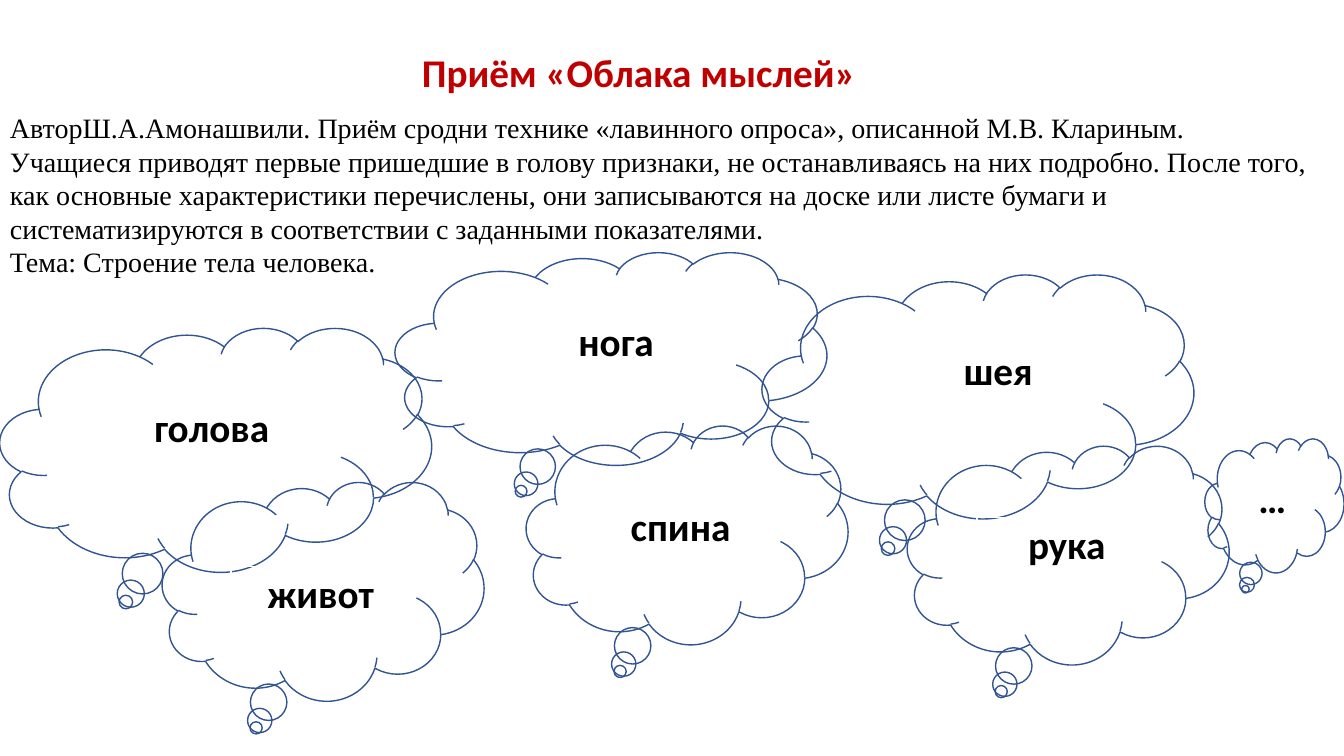
import pptx
import pptx.util
import pptx.dml.color
import pptx.enum.shapes
import pptx.enum.text
import pptx.oxml
import pptx.oxml.ns

HEAD = ("Приём «Облака мыслей»", (3.39, 0.45, 5.89, 0.57), 0.41)
LINES = [
    "АвторШ.А.Амонашвили. Приём сродни технике «лавинного опроса», описанной М.В. Клариным.",
    "Учащиеся приводят первые пришедшие в голову признаки, не останавливаясь на них подробно. После того,",
    "как основные характеристики перечислены, они записываются на доске или листе бумаги и",
    "систематизируются в соответствии с заданными показателями.",
    "Тема: Строение тела человека.",
]
CLOUDS = [
    ("голова", (0, 3.25, 4.28, 2.42), (1.21, 3.97, 1.78, 0.74)),
    ("нога", (3.92, 2.5, 4.28, 2.11), (5.22, 3.12, 1.78, 0.74)),
    ("шея", (7.56, 2.72, 4.28, 2.42), (9.01, 3.4, 1.78, 0.74)),
    ("живот", (1.61, 4.78, 3.19, 2.17), (2.29, 5.62, 1.78, 0.74)),
    ("спина", (5.22, 4.22, 3.19, 2.17), (5.86, 4.95, 1.78, 0.74)),
    ("рука", (9, 4.42, 3.19, 2.17), (9.69, 5.13, 1.78, 0.76)),
    ("…", (11.95, 4.35, 1.38, 1.33), (12.27, 4.67, 0.7, 0.76)),
]
COLORS = {"head": "C00000", "text": "000000", "line": "325491", "edge": "FFFFFF"}
EDGES = {"lnL": 1, "lnR": 1, "lnT": 1, "lnB": 3}
ALIGN = pptx.enum.text.PP_ALIGN


def rgb(name):
    return pptx.dml.color.RGBColor.from_string(COLORS[name])


def inch(box):
    return [pptx.util.Inches(n) for n in box]


def write(par, text, size, font, color, bold, align):
    par.alignment = align
    run = par.add_run()
    run.text = text
    run.font.size = pptx.util.Pt(size)
    run.font.name = font
    run.font.bold = bold
    run.font.color.rgb = rgb(color)


def add_cloud(slide, box):
    kind = pptx.enum.shapes.MSO_SHAPE.CLOUD_CALLOUT
    cloud = slide.shapes.add_shape(kind, *inch(box))
    cloud.shadow.inherit = False
    cloud.fill.background()
    cloud.line.color.rgb = rgb("line")
    cloud.line.width = pptx.util.Pt(1)


def add_word(slide, word, box, color="text"):
    frame = slide.shapes.add_table(1, 1, *inch(box))
    table = frame.table
    table.first_row = False
    table.horz_banding = False
    cell = table.cell(0, 0)
    write(cell.text_frame.paragraphs[0], word, 28, "Calibri", color, True, ALIGN.CENTER)
    props = cell._tc.get_or_add_tcPr()
    for tag, width in EDGES.items():
        props.append(pptx.oxml.parse_xml(
            f'<a:{tag} {pptx.oxml.ns.nsdecls("a")} w="{pptx.util.Pt(width)}"><a:solidFill>'
            f'<a:srgbClr val="{COLORS["edge"]}"/></a:solidFill></a:{tag}>'))
    cell.fill.background()
    return frame


def main():
    deck = pptx.Presentation()
    deck.slide_width, deck.slide_height = inch((13.33, 7.5))
    slide = deck.slides.add_slide(deck.slide_layouts[6])

    text, box, row = HEAD
    head = add_word(slide, text, box, "head")
    head.table.rows[0].height = pptx.util.Inches(row)
    head.height = pptx.util.Inches(box[3])

    for word, cloud, box in CLOUDS:
        add_cloud(slide, cloud)

    frame = slide.shapes.add_textbox(*inch((0, 1.04, 13.25, 1.78))).text_frame
    frame.word_wrap = True
    frame.vertical_anchor = pptx.enum.text.MSO_ANCHOR.MIDDLE
    for i, line in enumerate(LINES):
        par = frame.add_paragraph() if i else frame.paragraphs[0]
        write(par, line, 20, "Times New Roman", "text", False, ALIGN.LEFT)

    for word, cloud, box in CLOUDS:
        add_word(slide, word, box)

    deck.save("out.pptx")


if __name__ == "__main__":
    main()
